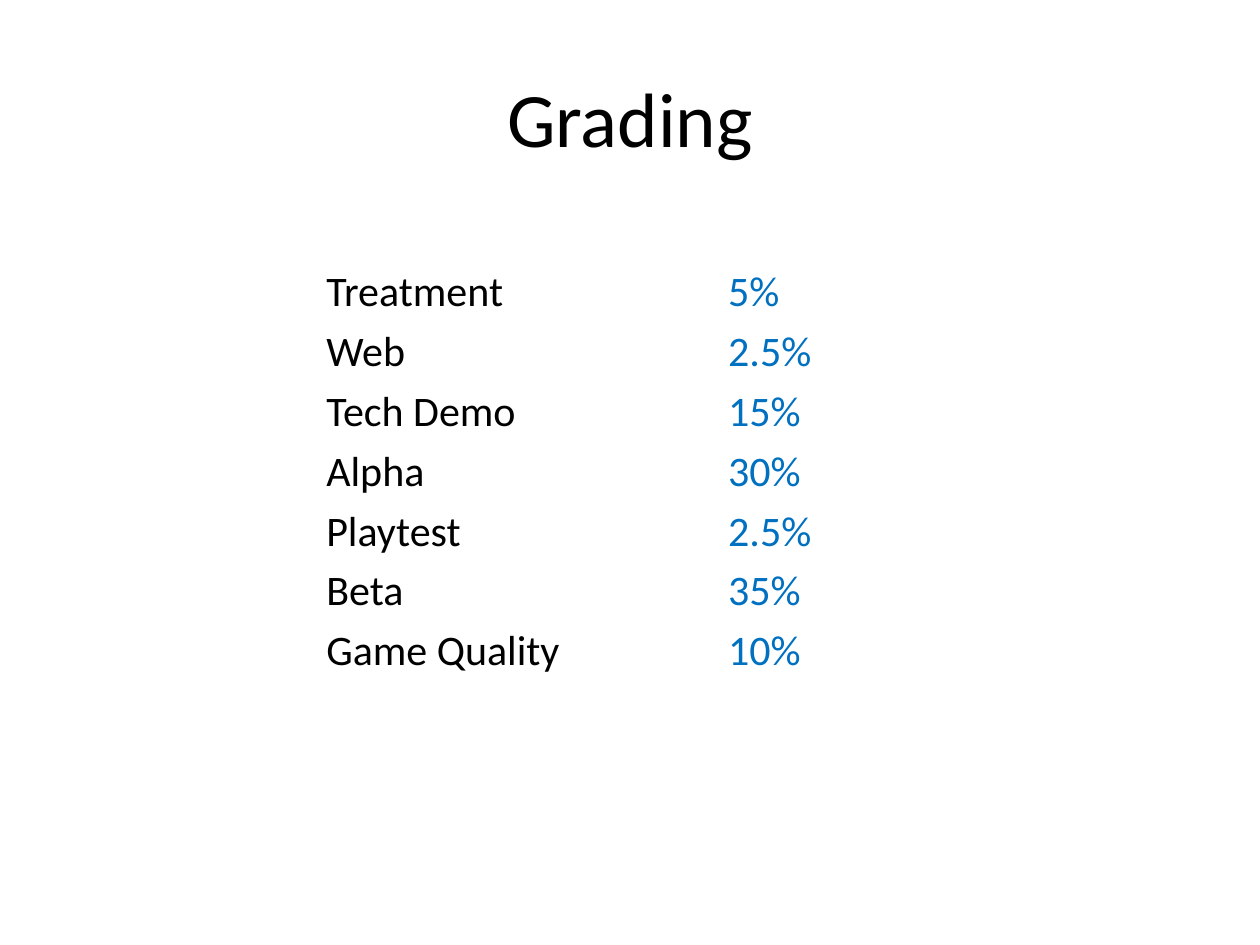
from pptx import Presentation
from pptx.dml.color import RGBColor
from pptx.enum.text import MSO_ANCHOR, PP_ALIGN
from pptx.util import Inches, Pt

BLACK = RGBColor(0x00, 0x00, 0x00)
BLUE = RGBColor(0x00, 0x70, 0xC0)

GRADING = [
    ("Treatment", "5%"),
    ("Web", "2.5%"),
    ("Tech Demo", "15%"),
    ("Alpha", "30%"),
    ("Playtest", "2.5%"),
    ("Beta", "35%"),
    ("Game Quality", "10%"),
]


class GradingSlide:
    """Hold the text style and the slide that receives the elements."""

    font_name = "Calibri"
    title_size = Pt(44)
    table_size = Pt(24)
    cell_margin = Inches(0.03)

    def __init__(self, presentation):
        self.slide = presentation.slides.add_slide(presentation.slide_layouts[5])

    def add_run(self, paragraph, text, size, color):
        run = paragraph.add_run()
        run.text = text
        run.font.name = self.font_name
        run.font.size = size
        run.font.color.rgb = color

    def add_title(self, text, left, top, width, height):
        title = self.slide.shapes.title
        title.left, title.top, title.width, title.height = left, top, width, height
        title.text_frame.vertical_anchor = MSO_ANCHOR.MIDDLE
        paragraph = title.text_frame.paragraphs[0]
        paragraph.alignment = PP_ALIGN.CENTER
        self.add_run(paragraph, text, self.title_size, BLACK)

    def add_table(self, rows, column_widths, column_colors, left, top, height):
        table = self.slide.shapes.add_table(
            len(rows), len(column_widths), left, top, sum(column_widths), height
        ).table
        table.first_row = False
        table.horz_banding = False
        for column, width in zip(table.columns, column_widths):
            column.width = width
        for row, texts in zip(table.rows, rows):
            for cell, text, color in zip(row.cells, texts, column_colors):
                self.fill_cell(cell, text, color)

    def fill_cell(self, cell, text, color):
        cell.fill.background()
        cell.vertical_anchor = MSO_ANCHOR.MIDDLE
        cell.margin_left = cell.margin_right = self.cell_margin
        cell.margin_top = cell.margin_bottom = self.cell_margin
        self.add_run(cell.text_frame.paragraphs[0], text, self.table_size, color)


def main():
    presentation = Presentation()
    presentation.slide_width = Inches(10)
    presentation.slide_height = Inches(7.5)
    grading = GradingSlide(presentation)
    grading.add_title("Grading", Inches(0.5), Inches(0.3), Inches(9), Inches(1.25))
    grading.add_table(
        GRADING,
        column_widths=(Inches(3.19), Inches(1.06)),
        column_colors=(BLACK, BLUE),
        left=Inches(2.56),
        top=Inches(2.08),
        height=Inches(3.33),
    )
    presentation.save("out.pptx")


if __name__ == "__main__":
    main()
